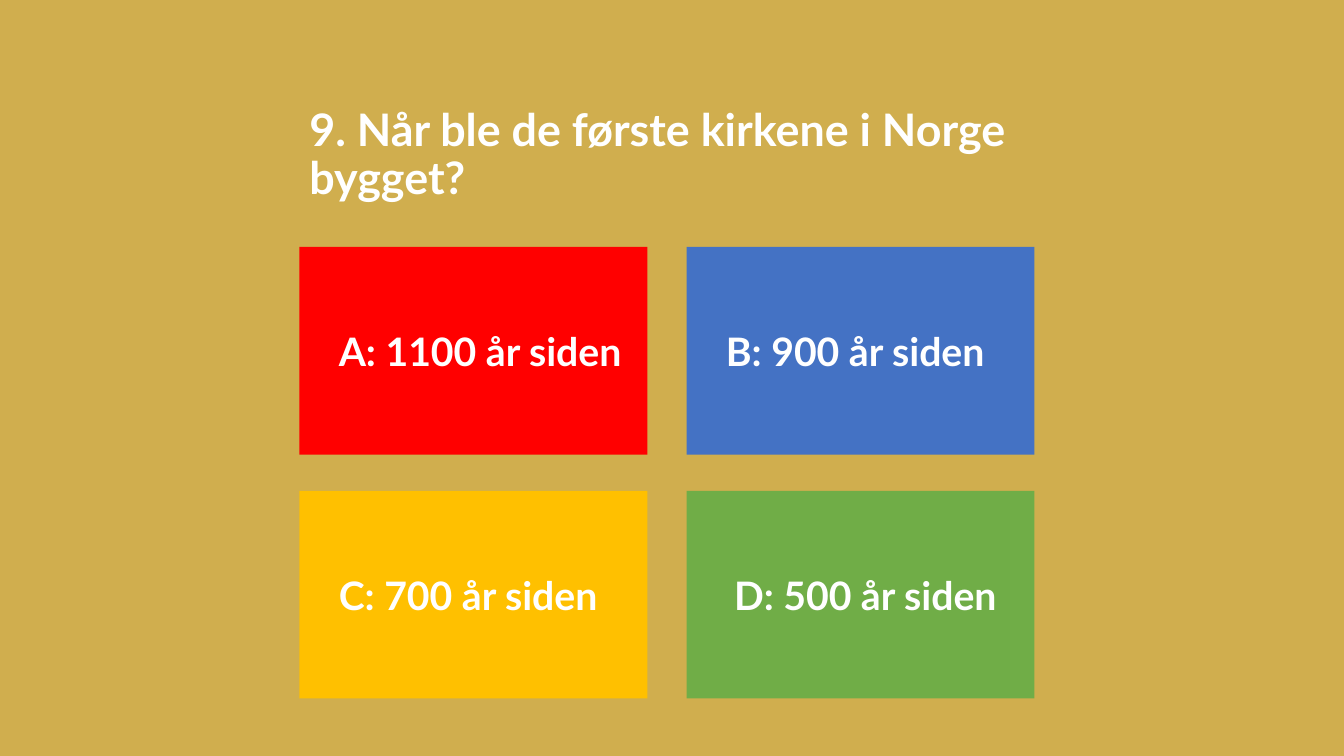
from pptx import Presentation
from pptx.dml.color import RGBColor
from pptx.enum.shapes import MSO_SHAPE
from pptx.enum.text import MSO_ANCHOR, PP_ALIGN
from pptx.util import Emu, Pt

RECTANGLE = MSO_SHAPE.RECTANGLE
MIDDLE, BOTTOM = MSO_ANCHOR.MIDDLE, MSO_ANCHOR.BOTTOM
LEFT = PP_ALIGN.LEFT

EMU_PER_PX = 9144
SLIDE_SIZE = (1333, 750)
QUESTION_BOX = (297, 95, 869, 113)
ANSWERS_BOX = (297, 245, 729, 448)
ANSWER_SIZE = (345, 206)
COLUMNS = 2

BACKGROUND = "D0AE4E"
WHITE = "FFFFFF"
QUESTION = "9. Når ble de første kirkene i Norge bygget?"
ANSWERS = [
    ("A: 1100 år siden", "FF0000", 39),
    ("B: 900 år siden", "4472C4", 39),
    ("C: 700 år siden", "FFC000", 39),
    ("D: 500 år siden", "70AD47", 47),
]


def px(length):
    """Turn a length in px into EMU."""
    return Emu(length * EMU_PER_PX)


def color(value):
    """Turn a hex string into a colour."""
    return RGBColor.from_string(value)


def set_attributes(target, values):
    """Set each named attribute of the target."""
    for name, value in values.items():
        setattr(target, name, value)


def write_text(shape, text, size, anchor, insets, line_spacing=1.0):
    """Write one bold white paragraph into a shape."""
    frame = shape.text_frame
    set_attributes(frame, {"word_wrap": True, "vertical_anchor": anchor})
    sides = ("margin_left", "margin_top", "margin_right", "margin_bottom")
    set_attributes(frame, dict(zip(sides, map(px, insets))))
    paragraph = frame.paragraphs[0]
    paragraph.text = text
    set_attributes(paragraph, {"alignment": LEFT, "line_spacing": line_spacing})
    set_attributes(paragraph.font, {"name": "Lato", "size": Pt(size), "bold": True})
    paragraph.font.color.rgb = color(WHITE)


def add_question(slide, box):
    """Place the question in its box."""
    shape = slide.shapes.add_textbox(*map(px, box))
    write_text(shape, QUESTION, 32, BOTTOM, (10, 5, 10, 5), 0.9)


def add_answers(slide, box):
    """Spread the answer tiles over the grid that fills the box."""
    left, top, box_width, box_height = box
    width, height = ANSWER_SIZE
    for index, (text, fill, left_inset) in enumerate(ANSWERS):
        row, column = divmod(index, COLUMNS)
        tile_left = left + column * (box_width - width)
        tile_top = top + row * (box_height - height)
        tile = slide.shapes.add_shape(
            RECTANGLE, px(tile_left), px(tile_top), px(width), px(height))
        tile.shadow.inherit = False
        tile.fill.solid()
        tile.fill.fore_color.rgb = color(fill)
        tile.line.fill.background()
        write_text(tile, text, 28, MIDDLE, (left_inset, 20, 20, 20))


def main():
    """Build the quiz slide and save it."""
    presentation = Presentation()
    presentation.slide_width, presentation.slide_height = map(px, SLIDE_SIZE)
    slide = presentation.slides.add_slide(presentation.slide_layouts[6])
    slide.background.fill.solid()
    slide.background.fill.fore_color.rgb = color(BACKGROUND)
    add_question(slide, QUESTION_BOX)
    add_answers(slide, ANSWERS_BOX)
    presentation.save("out.pptx")


if __name__ == "__main__":
    main()
